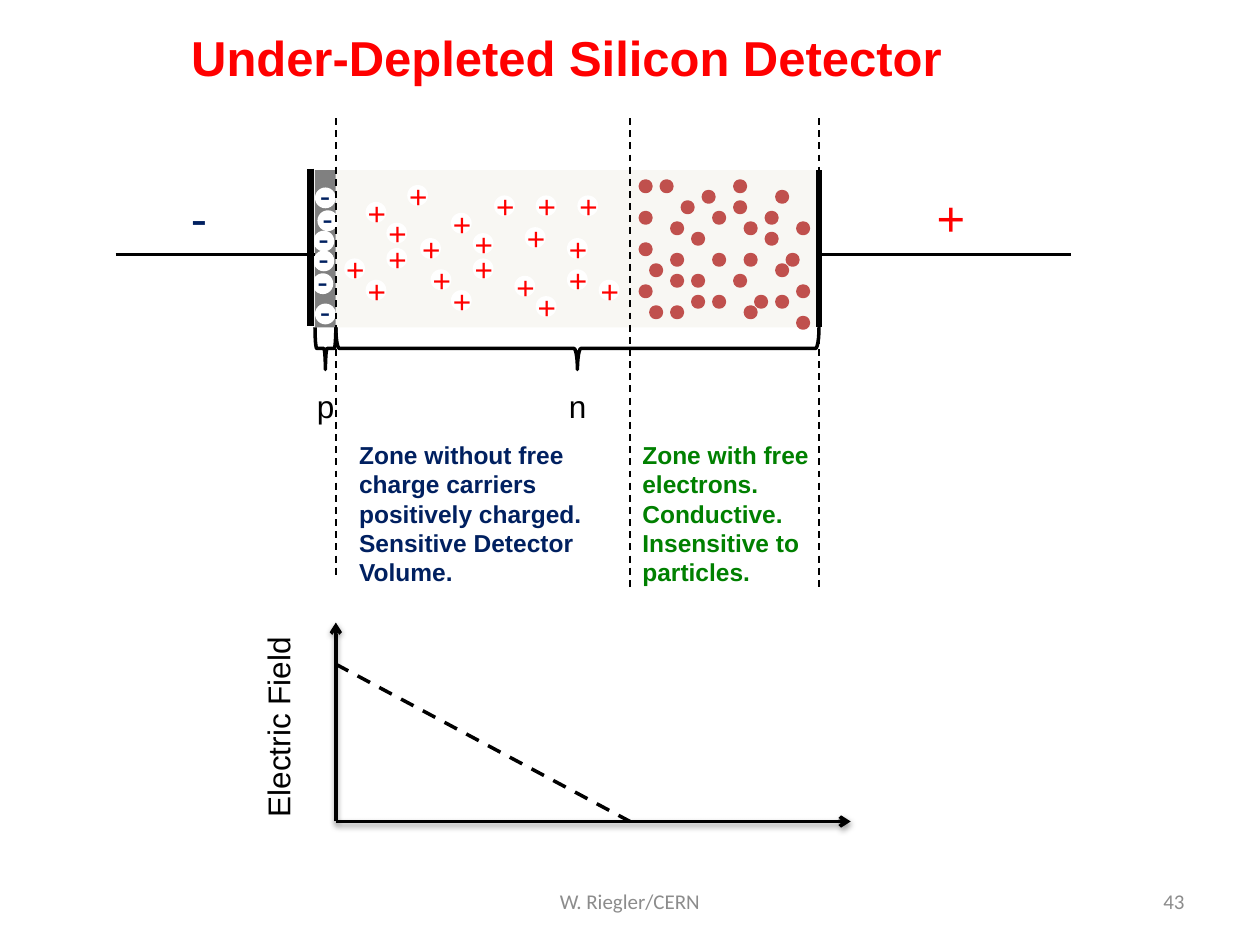
import pptx
import pptx.dml.color
import pptx.enum.dml
import pptx.enum.shapes
import pptx.enum.text
import pptx.oxml
import pptx.oxml.ns
import pptx.util

Cm = pptx.util.Cm
Pt = pptx.util.Pt
SHAPE = pptx.enum.shapes.MSO_SHAPE
ALIGN = pptx.enum.text.PP_ALIGN
ANCHOR = pptx.enum.text.MSO_ANCHOR
DASH = pptx.enum.dml.MSO_LINE.DASH

BLACK, RED, NAVY, GREEN = "000000", "FF0000", "002060", "008000"
GREY, ELECTRON, WHITE = "8C8C8C", "C0504D", "FFFFFF"


def paint(fill, color):
    """Make a fill solid in the given hex colour."""
    fill.solid()
    fill.fore_color.rgb = pptx.dml.color.RGBColor.from_string(color)


def write(shape, text, size=18, color=BLACK, bold=False, font="Arial",
          align=ALIGN.LEFT, anchor=ANCHOR.TOP, wrap=False):
    """Put text into a shape, one paragraph per line."""
    frame = shape.text_frame
    frame.text = text
    frame.auto_size = pptx.enum.text.MSO_AUTO_SIZE.NONE
    frame.word_wrap = wrap
    frame.vertical_anchor = anchor
    for paragraph in frame.paragraphs:
        paragraph.alignment = align
        paragraph.font.name = font
        paragraph.font.size = Pt(size)
        paragraph.font.bold = bold
        paint(paragraph.font.fill, color)


presentation = pptx.Presentation()
presentation.slide_width, presentation.slide_height = Cm(25.4), Cm(19.05)
slide = presentation.slides.add_slide(presentation.slide_layouts[5])

# Title
title = slide.shapes.title
title.left, title.top, title.width, title.height = Cm(3.6), Cm(0.43), Cm(18.2), Cm(1.45)
write(title, "Under-Depleted Silicon Detector", size=28, color=RED, bold=True, wrap=True)

# Edges of the zones, from left to right
P_LEFT, JUNCTION, DEPLETION_END, N_RIGHT = 6.35, 6.77, 12.7, 16.51
BULK_TOP, BULK_BOTTOM = 3.43, 6.6

# p and n regions
for left, right, color in [(JUNCTION, N_RIGHT, "F8F7F3"), (P_LEFT, JUNCTION, "808080")]:
    region = slide.shapes.add_shape(SHAPE.RECTANGLE, Cm(left), Cm(BULK_TOP),
                                    Cm(right - left), Cm(BULK_BOTTOM - BULK_TOP))
    region.shadow.inherit = False
    paint(region.fill, color)
    region.line.fill.background()

# Free electrons: the occupied columns in each row of a regular grid
GRID = 2.54 / 12
electron_rows = [
    [0, 2, 9], [6, 13], [4, 9], [0, 7, 12], [3, 10, 15], [5, 12], [0],
    [3, 7, 10, 14], [1, 13], [3, 5, 9], [0, 15], [5, 7, 11, 13], [1, 3, 10], [15],
]
for row, columns in enumerate(electron_rows):
    for column in columns:
        electron = slide.shapes.add_shape(
            SHAPE.OVAL, Cm(12.91 + column * GRID), Cm(3.65 + row * GRID), Cm(GRID), Cm(GRID))
        electron.shadow.inherit = False
        paint(electron.fill, ELECTRON)
        paint(electron.line.fill, ELECTRON)
        electron.line.width = Pt(2)

# Fixed charges: a sign on a white disc
positive_ions = [
    (9.09, 4.29), (9.53, 4.7), (9.96, 3.94), (10.37, 5.56), (10.8, 5.97), (8.68, 5.43),
    (10.58, 4.58), (9.09, 5.85), (9.53, 5.21), (7.37, 4.07), (7.79, 4.49), (8.21, 3.73),
    (10.8, 3.94), (6.94, 5.21), (8.47, 4.8), (7.37, 5.64), (7.79, 5), (11.43, 4.8),
    (11.64, 3.94), (12.07, 5.64), (11.43, 5.43),
]
negative_ions = [(6.35, 6.12), (6.3, 5.51), (6.32, 5.05), (6.32, 4.65), (6.35, 3.78), (6.4, 4.24)]
DISC = 0.42
for sign, color, ions, shift_x, shift_y, width in [
        ("+", RED, positive_ions, 0.21, 0.29, 0.88),
        ("-", NAVY, negative_ions, 0.15, 0.36, 0.73)]:
    for left, top in ions:
        ion = slide.shapes.add_group_shape()
        disc = ion.shapes.add_shape(SHAPE.OVAL, Cm(left), Cm(top), Cm(DISC), Cm(DISC))
        disc.shadow.inherit = False
        paint(disc.fill, WHITE)
        disc.line.fill.background()
        label = ion.shapes.add_textbox(Cm(left - shift_x), Cm(top - shift_y), Cm(width), Cm(1.02))
        write(label, sign, color=color)

# Braces below the regions, turned to point down
for left, right, depth in [(JUNCTION, N_RIGHT, 0.85), (P_LEFT, JUNCTION, 0.85)]:
    span = right - left
    brace = slide.shapes.add_shape(
        SHAPE.RIGHT_BRACE, Cm((left + right - depth) / 2),
        Cm(BULK_BOTTOM + (depth - span) / 2), Cm(depth), Cm(span))
    brace.rotation = 90
    brace.shadow.inherit = False
    brace.fill.background()
    paint(brace.line.fill, BLACK)
    brace.line.width = Pt(2)

# Wires, electrodes, zone limits, field axes and field profile
AXIS_Y = 16.56
lines = [
    # x1, y1, x2, y2, width, dashed, axis
    (N_RIGHT, 5.13, 21.59, 5.13, 2, False, False),
    (2.33, 5.13, P_LEFT, 5.13, 2, False, False),
    (N_RIGHT, BULK_TOP, N_RIGHT, BULK_BOTTOM, 4, False, False),
    (6.26, 3.4, 6.26, 6.58, 4, False, False),
    (DEPLETION_END, 2.38, DEPLETION_END, 11.91, 1, True, False),
    (JUNCTION, 2.38, JUNCTION, 11.68, 1, True, False),
    (N_RIGHT, 2.38, N_RIGHT, 11.91, 1, True, False),
    (JUNCTION, AXIS_Y, 17.15, AXIS_Y, 2, False, True),
    (JUNCTION, AXIS_Y, JUNCTION, 12.55, 2, False, True),
    (JUNCTION, 13.39, DEPLETION_END, AXIS_Y, 2, True, False),
]
for x1, y1, x2, y2, width, dashed, axis in lines:
    line = slide.shapes.add_connector(
        pptx.enum.shapes.MSO_CONNECTOR.STRAIGHT, Cm(x1), Cm(y1), Cm(x2), Cm(y2))
    paint(line.line.fill, BLACK)
    line.line.width = Pt(width)
    if dashed:
        line.line.dash_style = DASH
    if axis:  # axes keep the theme's shadow
        arrowhead = pptx.oxml.parse_xml(
            f'<a:tailEnd {pptx.oxml.ns.nsdecls("a")} type="arrow"/>')
        line.line._get_or_add_ln().append(arrowhead)
    else:
        line._element.spPr.append(
            pptx.oxml.parse_xml(f'<a:effectLst {pptx.oxml.ns.nsdecls("a")}/>'))

# Labels
labels = [
    ("n", 11.22, 7.67, 0.86, 1.02, {}),
    ("p", 6.14, 7.67, 0.86, 1.02, {}),
    ("+", 18.63, 3.65, 1.09, 1.45, dict(size=28, color=RED)),
    ("-", 3.6, 3.65, 0.84, 1.45, dict(size=28, color=NAVY)),
    ("Zone without free charge carriers positively charged.\nSensitive Detector Volume.",
     6.99, 8.74, 5.72, 3.25, dict(size=14, color=NAVY, bold=True, wrap=True)),
    ("Zone with free electrons. Conductive.\nInsensitive to particles.",
     12.7, 8.74, 4.23, 3.25, dict(size=14, color=GREEN, bold=True, wrap=True)),
    ("W. Riegler/CERN", 8.68, 17.66, 8.04, 1.01,
     dict(size=12, color=GREY, font="Calibri", align=ALIGN.CENTER, anchor=ANCHOR.MIDDLE, wrap=True)),
    ("43", 18.2, 17.66, 5.93, 1.01,
     dict(size=12, color=GREY, font="Calibri", align=ALIGN.RIGHT, anchor=ANCHOR.MIDDLE, wrap=True)),
]
for text, left, top, width, height, text_format in labels:
    write(slide.shapes.add_textbox(Cm(left), Cm(top), Cm(width), Cm(height)), text, **text_format)

axis_label = slide.shapes.add_textbox(Cm(3.51), Cm(14.12), Cm(4.19), Cm(1.02))
axis_label.rotation = 270
write(axis_label, "Electric Field")

presentation.save("out.pptx")
